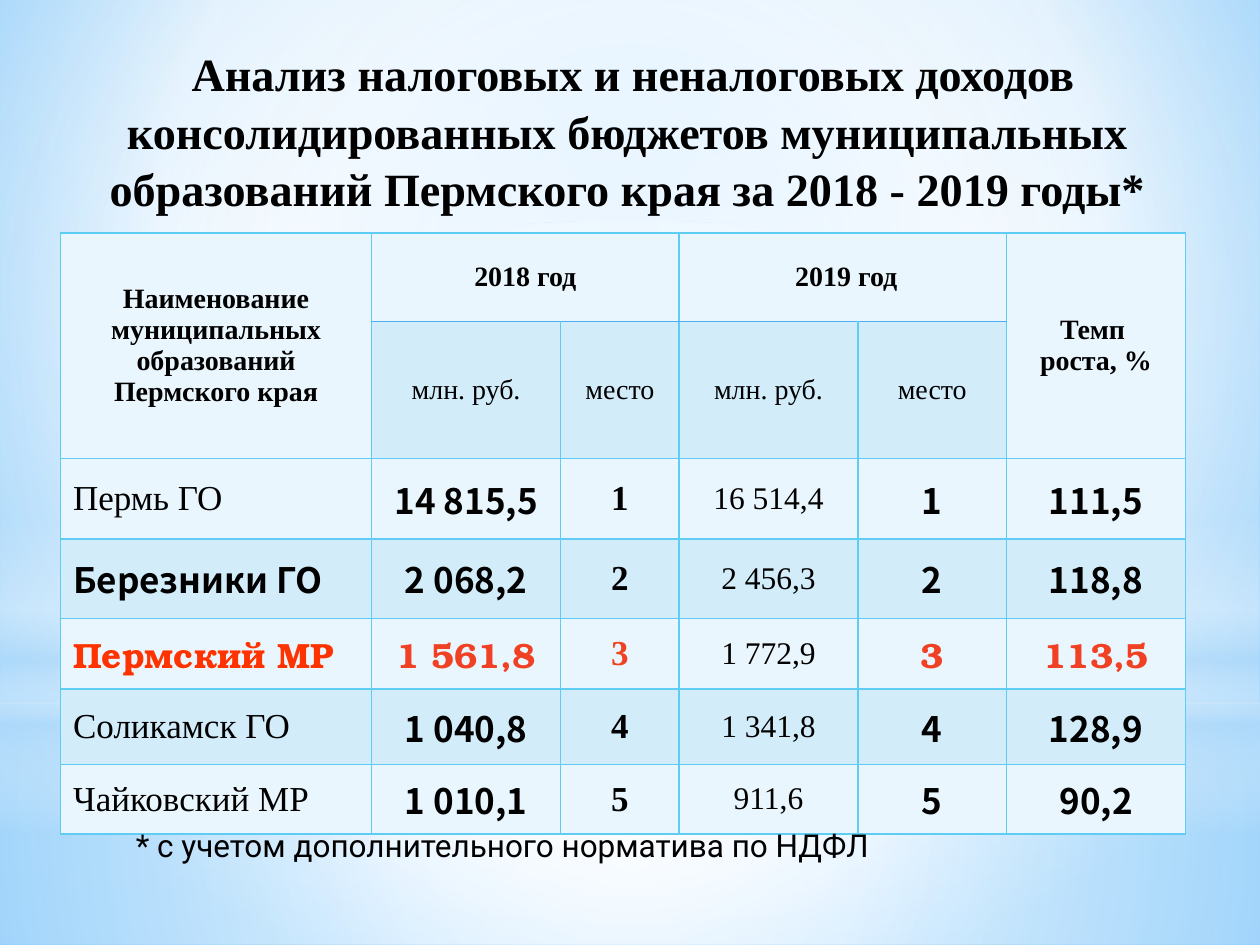
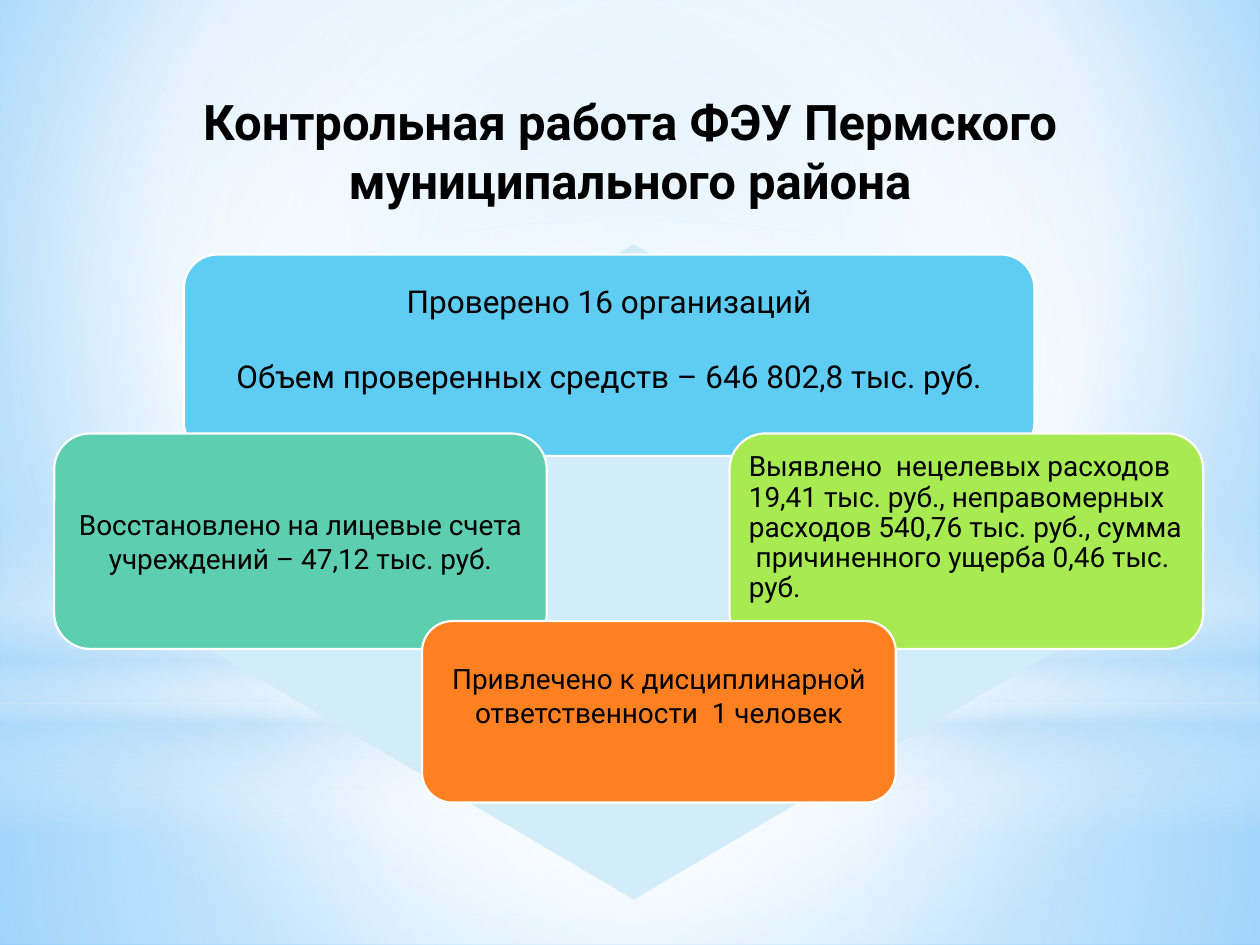
from pptx import Presentation
from pptx.dml.color import RGBColor
from pptx.enum.shapes import MSO_SHAPE as Shape
from pptx.enum.text import MSO_ANCHOR as Anchor, PP_ALIGN as Align
from pptx.oxml import parse_xml
from pptx.util import Inches, Pt

# Shared look
COLORS = {
    "black": "000000", "white": "FFFFFF", "haze": "B4DCFA",
    "sky": "9ED5FF", "deep sky": "5BB9FF",
    "light row": "EAF6FD", "dark row": "D2ECFA",
    "grid": "5ECCF3", "header rule": "4FADF3",
    "red name": "FF3300", "red value": "F14124",
    "blue": "5ECCF3", "lime": "A7EA52", "green": "5DCEAF", "orange": "FF8021",
}
SERIF, SANS, HEAVY, SLAB = "Times New Roman", "Roboto", "Noto Sans CJK KR", "TeX Gyre Bonum"
DRAWING = 'xmlns:a="http://schemas.openxmlformats.org/drawingml/2006/main"'

# Backdrop: stops are (position %, colour, opacity %), a focus is left, top, right, bottom %
SKY_STOPS = [(0, "sky", 100), (60, "white", 100), (100, "deep sky", 100)]
SKY_FOCUS = (20, 10, 20, 60)
CENTER = (50, 50, 50, 50)
BACKDROP = [
    (Shape.RECTANGLE, (0, 5.58, 10, 1.92), CENTER,
     [(0, "white", 91), (37, "white", 76), (100, "haze", 79)]),
    (Shape.RECTANGLE, (0, 0, 10, 5.58), CENTER,
     [(0, "white", 89), (48, "white", 62), (100, "haze", 79)]),
    (Shape.RECTANGLE, (0, 4.12, 10, 2.5), None,
     [(0, "white", 0), (29, "white", 30), (45, "haze", 40),
      (55, "white", 26), (65, "haze", 60), (100, "white", 0)]),
    (Shape.OVAL, (0, 1.75, 10, 5.58), CENTER,
     [(0, "white", 100), (56, "white", 0)]),
]

# Slide 1: income table
INCOME_TITLE = (" Анализ налоговых и неналоговых доходов консолидированных бюджетов "
                "муниципальных образований Пермского края за 2018 - 2019 годы*")
FOOTNOTE = "* с учетом дополнительного норматива по НДФЛ"
COLUMN_WIDTHS = [2.47, 1.5, 0.94, 1.42, 1.18, 1.42]
ROW_HEIGHTS = [0.7, 0.81, 0.64, 0.63, 0.56, 0.6, 0.55]
HEADER = [
    ["Наименование муниципальных образований Пермского края",
     "2018 год", "", " 2019 год", "", "Темп \nроста, %"],
    ["", "млн. руб.", "место", "млн. руб.", "место", ""],
]
MERGES = [((0, 0), (1, 0)), ((0, 1), (0, 2)), ((0, 3), (0, 4)), ((0, 5), (1, 5))]
INCOME = [
    ["Пермь ГО", "14 815,5", "1", "16 514,4", "1", "111,5"],
    ["Березники ГО", "2 068,2", "2", "2 456,3", "2", "118,8"],
    ["Пермский МР", "1 561,8", "3", "1 772,9", "3", "113,5"],
    ["Соликамск ГО", "1 040,8", "4", "1 341,8", "4", "128,9"],
    ["Чайковский МР", "1 010,1", "5", "911,6", "5", "90,2"],
]
BOLD_NAME, HIGHLIGHT = "Березники ГО", "Пермский МР"

# Slide 2: results of the audit, with the bottom inset that lifts the text
AUDIT_TITLE = "Контрольная работа ФЭУ Пермского муниципального района"
DIAMOND = (0.62, 1.94, 8.82, 5.2)
RESULTS = [
    ("Проверено 16 организаций\nОбъем проверенных средств – 646 802,8 тыс. руб.",
     (1.46, 2.02, 6.75, 1.6), "blue", 18, 0.34),
    ("Выявлено  нецелевых расходов 19,41 тыс. руб., неправомерных расходов "
     "540,76 тыс. руб., сумма  причиненного ущерба 0,46\u00a0тыс. руб.",
     (5.79, 3.44, 3.76, 1.71), "lime", 16, 0.07),
    ("Восстановлено на лицевые счета учреждений – 47,12 тыс. руб.",
     (0.43, 3.44, 3.91, 1.71), "green", 16, 0.07),
    ("Привлечено к дисциплинарной ответственности  1 человек",
     (3.35, 4.93, 3.76, 1.44), "orange", 16, 0.33),
]


def rgb(name):
    return RGBColor.from_string(COLORS[name])


def inches(place):
    return [Inches(value) for value in place]


def write(frame, text, size, font, bold=False, color="black", align=Align.CENTER):
    frame.text = text
    frame.word_wrap = True
    for para in frame.paragraphs:
        para.alignment = align
        for span in para.runs:
            span.font.size, span.font.name, span.font.bold = Pt(size), font, bold
            span.font.color.rgb = rgb(color)


def add_text(page, place, text, size, font, anchor=Anchor.TOP, **style):
    frame = page.shapes.add_textbox(*inches(place)).text_frame
    write(frame, text, size, font, **style)
    frame.vertical_anchor = anchor
    return frame


def add_plain_shape(page, kind, place):
    shape = page.shapes.add_shape(kind, *inches(place))
    shape.shadow.inherit = False
    shape.line.fill.background()
    return shape


def set_gradient(owner, fill, stops, focus):
    """Radial around the focus, or running downwards when there is none."""
    fill.gradient()
    marks = "".join(
        f'<a:gs pos="{position * 1000}"><a:srgbClr val="{COLORS[color]}">'
        f'<a:alpha val="{opacity * 1000}"/></a:srgbClr></a:gs>'
        for position, color, opacity in stops)
    if focus:
        sides = " ".join(f'{side}="{value * 1000}"' for side, value in zip("ltrb", focus))
        course = f'<a:path path="circle"><a:fillToRect {sides}/></a:path>'
    else:
        course = '<a:lin ang="5400000" scaled="0"/>'
    first = owner.element.xpath(".//a:gradFill")[0]
    first.getparent().replace(first, parse_xml(
        f'<a:gradFill {DRAWING} rotWithShape="1"><a:gsLst>{marks}</a:gsLst>{course}</a:gradFill>'))


def add_page(deck):
    page = deck.slides.add_slide(deck.slide_layouts[6])
    set_gradient(page, page.background.fill, SKY_STOPS, SKY_FOCUS)
    for kind, place, focus, stops in BACKDROP:
        shape = add_plain_shape(page, kind, place)
        set_gradient(shape, shape.fill, stops, focus)
    return page


def set_borders(cell, sides):
    properties = cell._tc.get_or_add_tcPr()
    for index, (side, color) in enumerate(sides.items()):
        properties.insert(index, parse_xml(
            f'<a:ln{side} {DRAWING} w="12700"><a:solidFill>'
            f'<a:srgbClr val="{COLORS[color]}"/></a:solidFill></a:ln{side}>'))


def cell_style(row, column, name):
    """Size, font, weight and colour of a table cell."""
    if row < 2:
        return 16, SERIF, row == 0, "black"
    if column == 3:
        return 18, SERIF, False, "black"
    marked = name == HIGHLIGHT
    if column == 0:
        if marked:
            return 20, SLAB, True, "red name"
        bold = name == BOLD_NAME
        return 20, HEAVY if bold else SERIF, bold, "black"
    color = "red value" if marked else "black"
    if column == 2:
        return 20, SERIF, True, color
    return 20, SLAB if marked else HEAVY, True, color


def add_income_table(page):
    rows = HEADER + INCOME
    frame = page.shapes.add_table(len(rows), len(COLUMN_WIDTHS),
                                  *inches((0.48, 1.85, 8.93, 4.49)))
    table = frame.table
    for column, width in zip(table.columns, COLUMN_WIDTHS):
        column.width = Inches(width)
    for row, height in zip(table.rows, ROW_HEIGHTS):
        row.height = Inches(height)
    for start, end in MERGES:
        table.cell(*start).merge(table.cell(*end))
    for r, texts in enumerate(rows):
        for c, text in enumerate(texts):
            cell = table.cell(r, c)
            cell.fill.solid()
            full_height = c in (0, 5) and r < 2
            cell.fill.fore_color.rgb = rgb("dark row" if r % 2 and not full_height else "light row")
            sides = dict.fromkeys("LRTB", "grid")
            if r < 2 and not full_height:
                sides["B" if r == 0 else "T"] = "header rule"
            set_borders(cell, sides)
            if text:
                size, font, bold, color = cell_style(r, c, texts[0])
                align = Align.LEFT if c == 0 and r >= 2 else Align.CENTER
                write(cell.text_frame, text, size, font, bold, color, align)
                cell.vertical_anchor = Anchor.MIDDLE


def build_income(deck):
    page = add_page(deck)
    add_income_table(page)
    title = add_text(page, (0.48, 0.29, 9, 1.48), INCOME_TITLE, 26.4, SERIF,
                     anchor=Anchor.MIDDLE, bold=True)
    title.paragraphs[0].line_spacing = 1.04
    add_text(page, (0.98, 6.51, 8.5, 0.4), FOOTNOTE, 18, SANS, align=Align.LEFT)


def build_audit(deck):
    page = add_page(deck)
    add_text(page, (0.5, 0.68, 9, 0.71), AUDIT_TITLE, 28, SANS, bold=True)
    diamond = add_plain_shape(page, Shape.DIAMOND, DIAMOND)
    diamond.fill.solid()
    diamond.fill.fore_color.rgb = rgb("dark row")
    for text, place, color, size, bottom in RESULTS:
        box = add_plain_shape(page, Shape.ROUNDED_RECTANGLE, place)
        box.fill.solid()
        box.fill.fore_color.rgb = rgb(color)
        box.line.color.rgb = rgb("white")
        box.line.width = Pt(1.25)
        frame = box.text_frame
        frame.margin_left = frame.margin_right = frame.margin_top = Inches(0.07)
        frame.margin_bottom = Inches(bottom)
        # The long finding is set as tight, left-aligned text from the top
        long_text = color == "lime"
        write(frame, text, size, SANS, align=Align.LEFT if long_text else Align.CENTER)
        frame.vertical_anchor = Anchor.TOP if long_text else Anchor.MIDDLE
        if long_text:
            frame.paragraphs[0].line_spacing = 0.9
        for para in frame.paragraphs[1:]:
            para.space_before = Pt(21)


def main():
    deck = Presentation()
    deck.slide_width, deck.slide_height = Inches(10), Inches(7.5)
    build_income(deck)
    build_audit(deck)
    deck.save("out.pptx")


if __name__ == "__main__":
    main()
